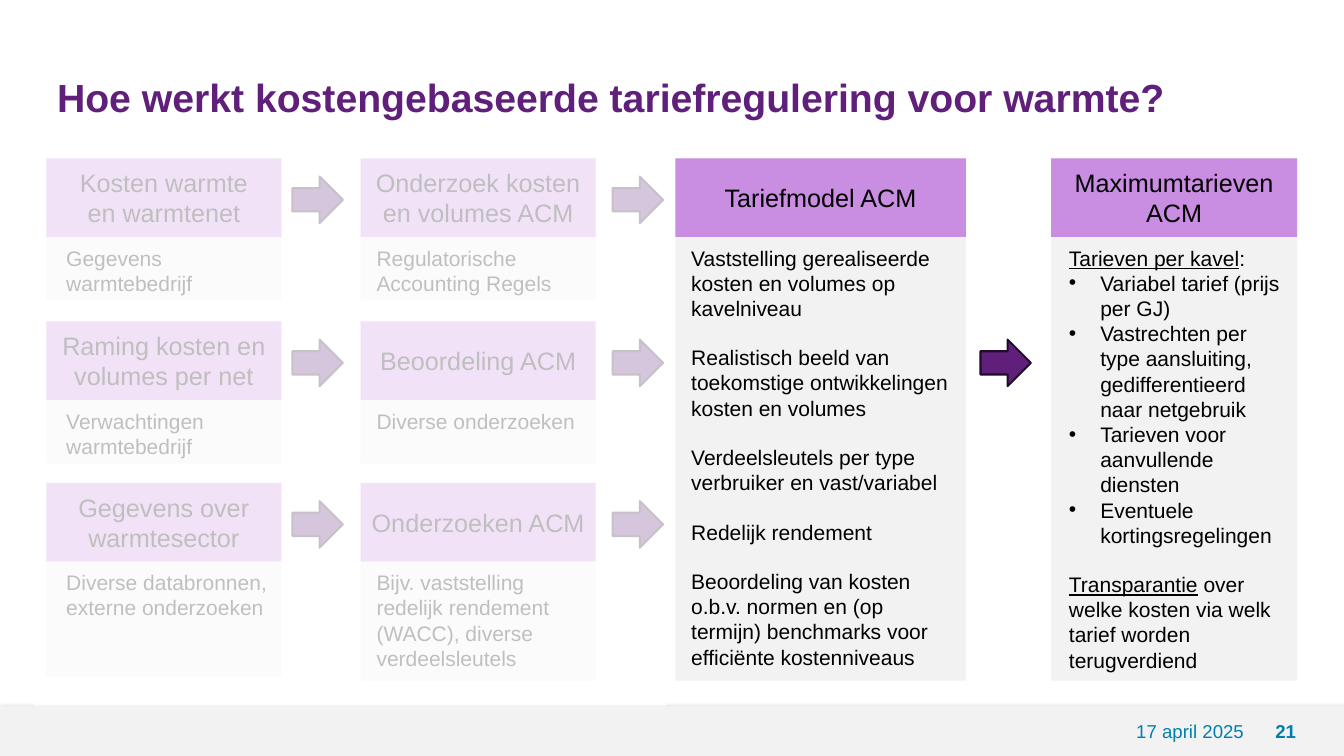
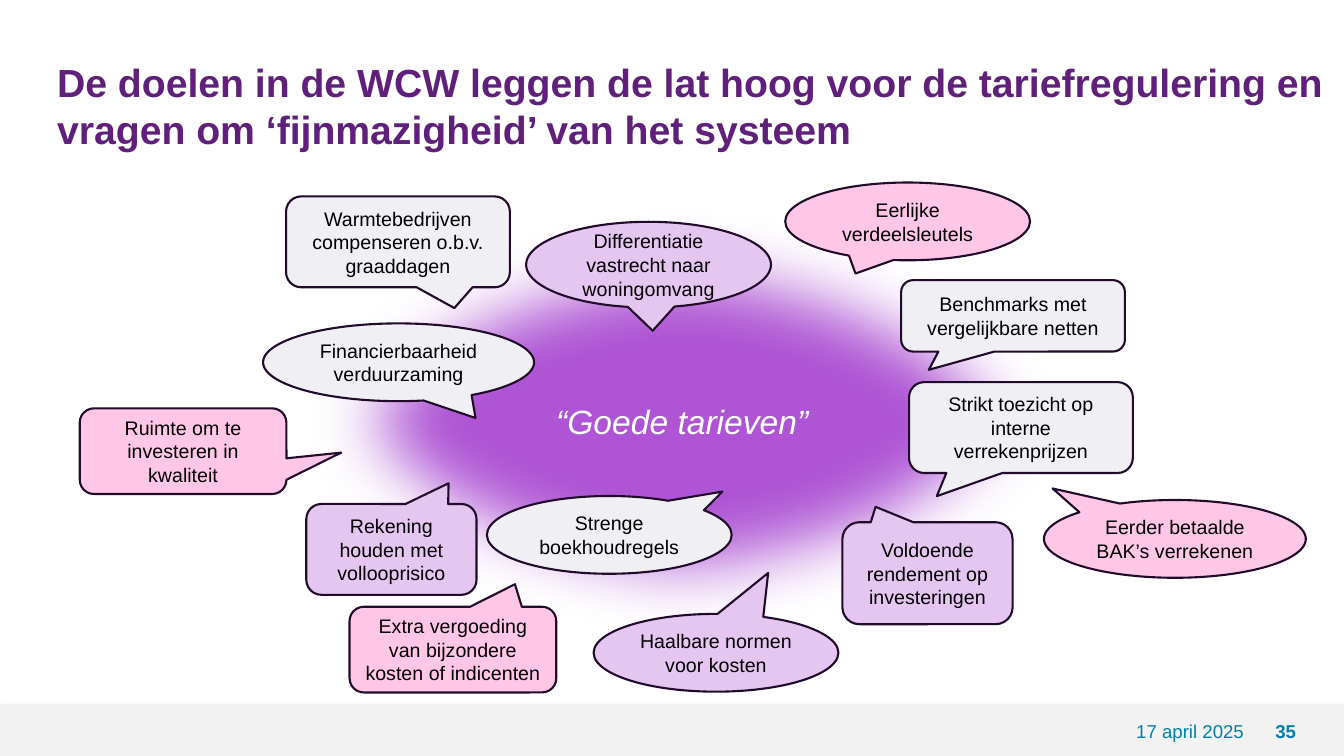
from lxml import etree
from pptx import Presentation
from pptx.dml.color import RGBColor
from pptx.enum.shapes import MSO_SHAPE
from pptx.enum.text import MSO_ANCHOR, PP_ALIGN
from pptx.oxml.ns import qn
from pptx.util import Cm, Pt

RECT = MSO_SHAPE.RECTANGLE
OVAL = MSO_SHAPE.OVAL
ARROW = MSO_SHAPE.RIGHT_ARROW
ROUND = MSO_SHAPE.ROUNDED_RECTANGULAR_CALLOUT
ELLIPSE = MSO_SHAPE.OVAL_CALLOUT
TOP, MIDDLE = MSO_ANCHOR.TOP, MSO_ANCHOR.MIDDLE
LEFT, CENTER, RIGHT = PP_ALIGN.LEFT, PP_ALIGN.CENTER, PP_ALIGN.RIGHT

BLACK = RGBColor(0x00, 0x00, 0x00)
WHITE = RGBColor(0xFF, 0xFF, 0xFF)
PURPLE = RGBColor(0x5F, 0x1F, 0x7A)
OUTLINE = RGBColor(0x21, 0x0B, 0x2A)
HEADER = RGBColor(0xC9, 0x8D, 0xE2)
GLOW = RGBColor(0xAE, 0x54, 0xD4)
PANEL = RGBColor(0xF2, 0xF2, 0xF2)
BLUE = RGBColor(0x00, 0x7F, 0xAE)
GREY = RGBColor(0xF0, 0xEF, 0xF4)
PINK = RGBColor(0xFF, 0xC7, 0xE5)
LILAC = RGBColor(0xE4, 0xC6, 0xF1)

SLIDE_W, SLIDE_H = 33.87, 19.05
BAND_TOP, BAND_H = 17.78, 1.27
DATE = "17 april 2025"

TITLE_FONT = {"size": Pt(28), "bold": True, "color": PURPLE}
HEADER_FONT = {"size": Pt(18), "color": BLACK}
BODY_FONT = {"size": Pt(15), "color": BLACK}
CALLOUT_FONT = {"size": Pt(14), "color": BLACK}
GOAL_FONT = {"size": Pt(24), "italic": True, "color": WHITE}
DATE_FONT = {"size": Pt(13.3), "color": BLUE}
NUMBER_FONT = {**DATE_FONT, "bold": True}

# Process cards: left edge, width, text offset and text width per column
COLUMNS = [(1.17, 5.92, 0.25, 5.59), (9.09, 5.92, 0.15, 5.77),
           (17.02, 7.32, 0.15, 7.16), (26.49, 6.2, 0.2, 5.84)]
ROW_TOPS = [3.99, 8.1, 12.17]
HEADER_H, CARD_H, FULL_H = 1.98, 3.58, 13.16
ARROW_LEFTS = [7.37, 15.44, 24.71]
BLANK_LINE = Pt(17.25)
BULLET_INDENT = Cm(0.79)

INPUT_CARDS = [  # column, row, height, header, text
    (0, 0, CARD_H, "Kosten warmte\ven warmtenet", "Gegevens warmtebedrijf"),
    (1, 0, CARD_H, "Onderzoek kosten en volumes ACM",
     "Regulatorische Accounting Regels"),
    (0, 1, CARD_H, "Raming kosten en volumes per net",
     "Verwachtingen warmtebedrijf"),
    (1, 1, CARD_H, "Beoordeling ACM", "Diverse onderzoeken"),
    (0, 2, 4.88, "Gegevens over warmtesector",
     "Diverse databronnen, externe onderzoeken"),
    (1, 2, 4.98, "Onderzoeken ACM", "Bijv. vaststelling redelijk rendement "
     "(WACC), diverse verdeelsleutels"),
]
MODEL_STEPS = [
    "Vaststelling gerealiseerde kosten en volumes op kavelniveau",
    "Realistisch beeld van toekomstige ontwikkelingen kosten en volumes",
    "Verdeelsleutels per type verbruiker en vast/variabel",
    "Redelijk rendement",
    "Beoordeling van kosten o.b.v. normen en (op termijn) benchmarks voor "
    "efficiënte kostenniveaus",
]
TARIFFS = [
    "Variabel tarief (prijs per GJ)",
    "Vastrechten per type aansluiting, gedifferentieerd naar netgebruik",
    "Tarieven voor aanvullende diensten",
    "Eventuele kortingsregelingen",
]
CALLOUTS = [  # outline, fill, box, pointer tip, text
    (ROUND, GREY, (22.91, 9.63, 5.64, 2.29), (-0.376, 0.755),
     "Strikt toezicht op interne verrekenprijzen"),
    (ELLIPSE, PINK, (19.79, 4.6, 6.17, 1.96), (-0.213, 0.67),
     "Eerlijke verdeelsleutels"),
    (ROUND, LILAC, (21.23, 13.16, 4.29, 2.57), (-0.305, -0.651),
     "Voldoende rendement op investeringen"),
    (ELLIPSE, GREY, (12.27, 12.5, 6.17, 1.96), (0.462, -0.557),
     "Strenge boekhoudregels"),
    (ELLIPSE, LILAC, (14.96, 15.47, 6.17, 1.96), (0.213, -1.027),
     "Haalbare normen voor kosten"),
    (ROUND, PINK, (8.81, 15.29, 5.21, 2.16), (0.3, -0.763),
     "Extra vergoeding van bijzondere kosten of indicenten"),
    (ROUND, GREY, (22.71, 7.06, 5.64, 1.8), (-0.376, 0.755),
     "Benchmarks met vergelijkbare netten"),
    (ELLIPSE, PINK, (26.31, 12.6, 6.6, 1.96), (-0.467, -0.648),
     "Eerder betaalde BAK’s verrekenen"),
    (ELLIPSE, LILAC, (13.26, 5.59, 6.17, 2.16), (0.017, 0.771),
     "Differentiatie vastrecht naar woningomvang"),
    (ROUND, LILAC, (7.72, 12.7, 4.29, 2.29), (0.336, -0.728),
     "Rekening houden met vollooprisico"),
    (ROUND, GREY, (7.21, 4.95, 5.64, 2.29), (0.252, 0.729),
     "Warmtebedrijven compenseren o.b.v. graaddagen"),
    (ELLIPSE, GREY, (6.63, 8.15, 6.83, 1.96), (0.284, 0.716),
     "Financierbaarheid verduurzaming"),
    (ROUND, PINK, (2.01, 10.29, 5.21, 2.16), (0.765, 0.017),
     "Ruimte om te investeren in kwaliteit"),
]


def style_font(font, style):
    font.name = "Arial"
    for name, value in style.items():
        if name == "color":
            font.color.rgb = value
        else:
            setattr(font, name, value)


def write(shape, paragraphs, style, align=CENTER, anchor=MIDDLE):
    frame = shape.text_frame
    frame.word_wrap = True
    frame.vertical_anchor = anchor
    for index, text in enumerate(paragraphs):
        paragraph = frame.add_paragraph() if index else frame.paragraphs[0]
        paragraph.text = text
        paragraph.alignment = align
        for run in paragraph.runs:
            style_font(run.font, style)
    return frame.paragraphs


def add_text(slide, box, paragraphs, style, align=LEFT, anchor=MIDDLE):
    text_box = slide.shapes.add_textbox(*map(Cm, box))
    return write(text_box, paragraphs, style, align, anchor)


def add_filled(slide, kind, box, fill, outlined=False):
    shape = slide.shapes.add_shape(kind, *map(Cm, box))
    shape.shadow.inherit = False
    shape.fill.solid()
    shape.fill.fore_color.rgb = fill
    if outlined:
        shape.line.color.rgb = OUTLINE
        shape.line.width = Pt(1.5)
    else:
        shape.line.fill.background()
    return shape


def add_effect(shape, tag, **values):
    effects = shape._element.spPr.find(qn("a:effectLst"))
    attributes = {name: str(value) for name, value in values.items()}
    return etree.SubElement(effects, qn(tag), attributes)


def set_alpha(color, percent):
    etree.SubElement(color, qn("a:alpha"), val=str(percent * 1000))


def add_base(prs, title, title_box, number):
    """Add a slide with its title and footer band."""
    slide = prs.slides.add_slide(prs.slide_layouts[6])
    band = add_filled(slide, RECT, (0, BAND_TOP, SLIDE_W, BAND_H), PANEL)
    shadow = add_effect(band, "a:outerShdw", blurRad=Pt(4), dist=Pt(2),
                        dir=90 * 60000, rotWithShape=0)
    set_alpha(etree.SubElement(shadow, qn("a:srgbClr"), val=str(BLACK)), 46)
    add_text(slide, (23.42, BAND_TOP, 8.18, BAND_H), [DATE], DATE_FONT, RIGHT)
    add_text(slide, (31.6, BAND_TOP, 1.6, BAND_H), [number], NUMBER_FONT,
             CENTER)
    add_text(slide, title_box, [title], TITLE_FONT)
    return slide


def add_card(slide, column, row, height, header, paragraphs):
    left, width, text_offset, text_width = COLUMNS[column]
    top = ROW_TOPS[row]
    add_filled(slide, RECT, (left, top, width, height), PANEL)
    heading = add_filled(slide, RECT, (left, top, width, HEADER_H), HEADER)
    write(heading, [header], HEADER_FONT)
    text_top = HEADER_H + 0.08
    box = (left + text_offset, top + text_top, text_width, height - text_top)
    return add_text(slide, box, paragraphs, BODY_FONT, anchor=TOP)


def add_arrow(slide, column, row):
    box = (ARROW_LEFTS[column], ROW_TOPS[row] + 0.46, 1.27, 1.17)
    add_filled(slide, ARROW, box, PURPLE, outlined=True)


def add_bullet(paragraph):
    properties = paragraph._p.get_or_add_pPr()
    properties.set("marL", str(BULLET_INDENT))
    properties.set("indent", str(-BULLET_INDENT))
    etree.SubElement(properties, qn("a:buFont"), typeface="Arial")
    etree.SubElement(properties, qn("a:buChar"), char="•")


def add_lead(paragraph, lead, rest):
    """Fill a paragraph with an underlined lead and plain text after it."""
    for text, underline in ((lead, True), (rest, False)):
        run = paragraph.add_run()
        run.text = text
        style_font(run.font, {**BODY_FONT, "underline": underline})


def build_process(prs):
    slide = add_base(
        prs, "Hoe werkt kostengebaseerde tariefregulering voor warmte?",
        (1.19, 0.99, 31.19, 2.92), "21")
    for column, row, height, header, text in INPUT_CARDS:
        add_card(slide, column, row, height, header, [text])
        add_arrow(slide, column, row)

    steps = add_card(slide, 2, 0, FULL_H, "Tariefmodel ACM", MODEL_STEPS)
    for step in steps[:-1]:
        step.space_after = BLANK_LINE

    veil = add_filled(slide, RECT, (0.84, 3.81, 15.95, 13.97), WHITE)
    set_alpha(veil._element.spPr.find(qn("a:solidFill"))[0], 75)

    add_arrow(slide, 2, 1)
    per_lot, *tariffs, transparency = add_card(
        slide, 3, 0, FULL_H, "Maximumtarieven ACM", ["", *TARIFFS, ""])
    add_lead(per_lot, "Tarieven per kavel", ":")
    for tariff in tariffs:
        add_bullet(tariff)
    add_lead(transparency, "Transparantie",
             " over welke kosten via welk tarief worden terugverdiend")
    transparency.space_before = BLANK_LINE


def build_goals(prs):
    slide = add_base(
        prs, "De doelen in de WCW leggen de lat hoog voor de "
        "tariefregulering en vragen om ‘fijnmazigheid’ van het systeem",
        (1.19, 1.19, 32.44, 2.92), "35")
    goal = add_filled(slide, OVAL, (7.11, 5.13, 20.17, 10.97), GLOW)
    add_effect(goal, "a:softEdge", rad=Pt(50))
    write(goal, ["“Goede tarieven”"], GOAL_FONT)
    for kind, fill, box, tip, text in CALLOUTS:
        callout = add_filled(slide, kind, box, fill, outlined=True)
        callout.adjustments[0], callout.adjustments[1] = tip
        write(callout, [text], CALLOUT_FONT)


def main():
    prs = Presentation()
    prs.slide_width, prs.slide_height = Cm(SLIDE_W), Cm(SLIDE_H)
    build_process(prs)
    build_goals(prs)
    prs.save("out.pptx")


if __name__ == "__main__":
    main()
